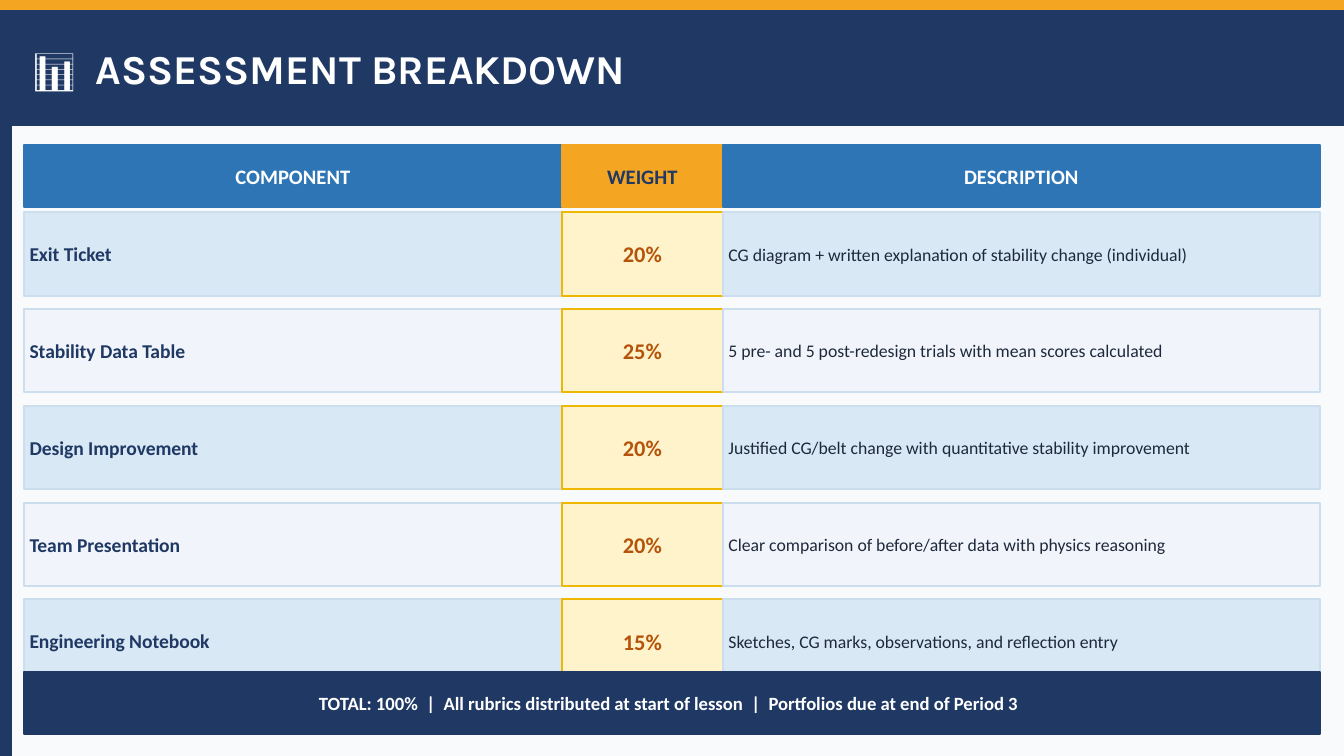
from dataclasses import dataclass

from pptx import Presentation
from pptx.dml.color import RGBColor as Rgb
from pptx.enum.shapes import MSO_SHAPE as Kind
from pptx.enum.text import MSO_ANCHOR as Anchor, MSO_AUTO_SIZE as Fit, PP_ALIGN as Align
from pptx.util import Pt


@dataclass(frozen=True)
class Theme:
    # Colours
    paper: str = "F8FAFC"
    navy: str = "1F3864"
    blue: str = "2E75B6"
    gold: str = "F4A522"
    white: str = "FFFFFF"
    band: str = "D9E8F5"
    pale: str = "F1F5FB"
    edge: str = "CCDDEE"
    cream: str = "FFF3CC"
    rim: str = "EEB800"
    rust: str = "B45309"
    ink: str = "1E293B"
    # Fonts and type sizes
    head: str = "Karla"
    body: str = "Calibri"
    title: float = 22
    label: float = 11
    name: float = 10.5
    share: float = 12
    note: float = 9.5
    total: float = 10


T = Theme()
WIDTH, HEIGHT = 720, 405
STRIP = 5.76    # top strip and left rail
LEFT = 12.96
COLS = (288, 86.4, 319.68)
BAR = 33.12     # header and total bars
TOP = 77.76
FIRST, STEP, TALL = 113.76, 51.84, 44.64
PAD = 2.88

ROWS = (
    ("Exit Ticket", "20%",
     "CG diagram + written explanation of stability change (individual)"),
    ("Stability Data Table", "25%",
     "5 pre- and 5 post-redesign trials with mean scores calculated"),
    ("Design Improvement", "20%",
     "Justified CG/belt change with quantitative stability improvement"),
    ("Team Presentation", "20%",
     "Clear comparison of before/after data with physics reasoning"),
    ("Engineering Notebook", "15%",
     "Sketches, CG marks, observations, and reflection entry"),
)


def paint(shape, fill, line=None):
    """Give a shape a solid fill and a thin outline."""
    shape.fill.solid()
    shape.fill.fore_color.rgb = Rgb.from_string(fill)
    shape.line.color.rgb = Rgb.from_string(line or fill)
    shape.line.width = Pt(1)


def write(shape, text, size, color, bold=True, font=T.body,
          align=Align.CENTER, left=0, right=0):
    """Put one line of text, centred in height, into a shape."""
    frame = shape.text_frame
    frame.word_wrap = True
    frame.auto_size = Fit.NONE
    frame.vertical_anchor = Anchor.MIDDLE
    frame.margin_left, frame.margin_right = Pt(left), Pt(right)
    frame.margin_top = frame.margin_bottom = 0
    para = frame.paragraphs[0]
    para.alignment = align
    run = para.add_run()
    run.text = text
    run.font.name, run.font.size, run.font.bold = font, Pt(size), bold
    run.font.color.rgb = Rgb.from_string(color)


def box(slide, x, y, w, h, fill, line=None):
    """Add a plain rectangle."""
    shape = slide.shapes.add_shape(Kind.RECTANGLE, Pt(x), Pt(y), Pt(w), Pt(h))
    shape.shadow.inherit = False
    paint(shape, fill, line)
    return shape


def banner(slide, text):
    """Turn the title placeholder into the banner, above the frame bars."""
    title = slide.shapes.title
    title.left, title.top = Pt(STRIP), Pt(STRIP)
    title.width, title.height = Pt(WIDTH - STRIP), Pt(61.2)
    paint(title, T.navy)
    write(title, text, T.title, T.white, font=T.head, align=Align.LEFT,
          left=12.24, right=18)
    title.element.getparent().append(title.element)


def cells(slide, y, h, fills, lines):
    """Add one row of boxes across the columns."""
    return [box(slide, LEFT + sum(COLS[:i]), y, w, h, fills[i], lines[i])
            for i, w in enumerate(COLS)]


def header(slide):
    fills = (T.blue, T.gold, T.blue)
    labels = (("COMPONENT", T.white), ("WEIGHT", T.navy), ("DESCRIPTION", T.white))
    for cell, (text, color) in zip(cells(slide, TOP, BAR, fills, fills), labels):
        write(cell, text, T.label, color)


def entry(slide, i, name, share, note):
    """Add one assessment row; fills alternate."""
    fill = T.pale if i % 2 else T.band
    first, mid, last = cells(slide, FIRST + i * STEP, TALL,
                             (fill, T.cream, fill), (T.edge, T.rim, T.edge))
    write(first, name, T.name, T.navy, align=Align.LEFT, left=PAD)
    write(mid, share, T.share, T.rust)
    write(last, note, T.note, T.ink, bold=False, align=Align.LEFT, left=PAD)


def main():
    deck = Presentation()
    deck.slide_width, deck.slide_height = Pt(WIDTH), Pt(HEIGHT)
    slide = deck.slides.add_slide(deck.slide_layouts[5])
    back = slide.background.fill
    back.solid()
    back.fore_color.rgb = Rgb.from_string(T.paper)

    # Frame and title
    box(slide, 0, 0, WIDTH, STRIP, T.gold)
    box(slide, 0, STRIP, STRIP, HEIGHT - STRIP, T.navy)
    banner(slide, "📊  ASSESSMENT BREAKDOWN")

    # Assessment grid
    header(slide)
    for i, row in enumerate(ROWS):
        entry(slide, i, *row)

    # Total bar, over the foot of the last row
    total = box(slide, LEFT, 360, sum(COLS), BAR, T.navy)
    write(total, "TOTAL: 100%  |  All rubrics distributed at start of lesson"
          "  |  Portfolios due at end of Period 3",
          T.total, T.white, left=PAD, right=7.2)

    deck.save("out.pptx")


if __name__ == "__main__":
    main()
